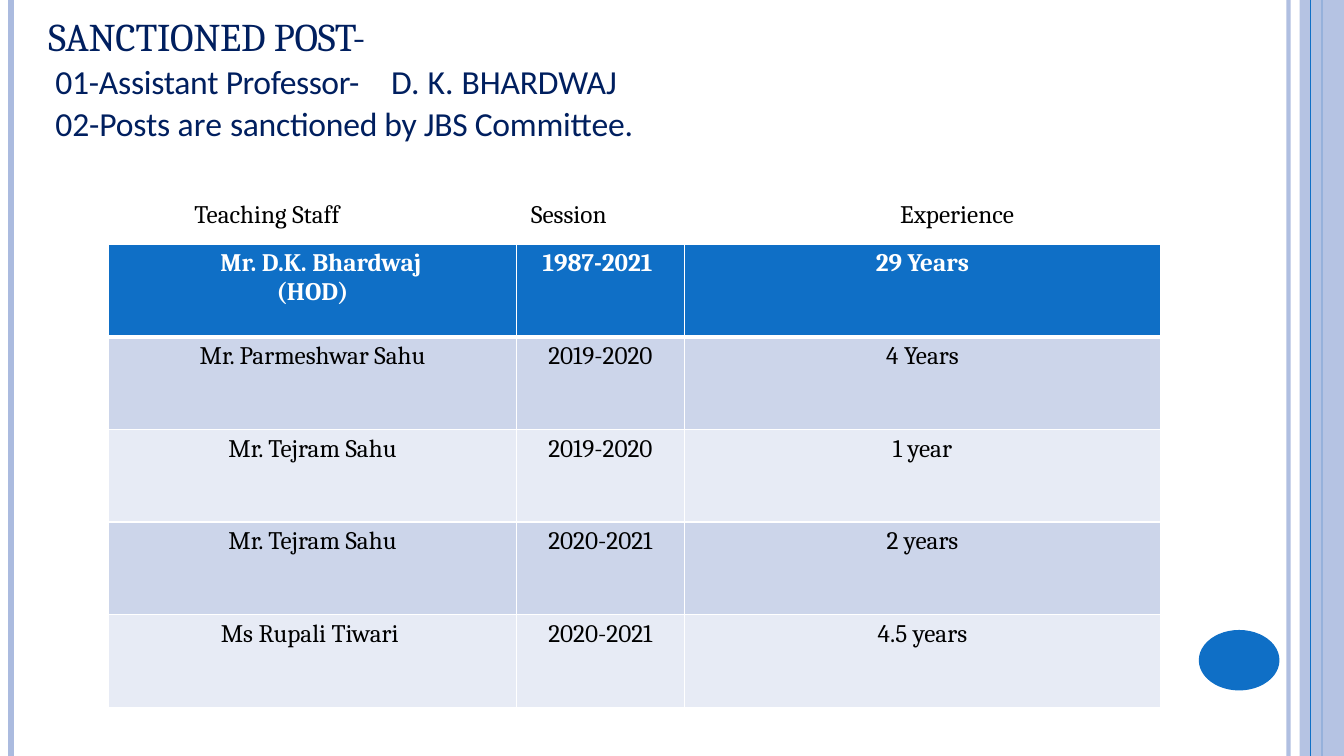
"""Build the sanctioned post and teaching staff slide."""
from lxml.etree import SubElement
from pptx import Presentation
from pptx.dml.color import RGBColor
from pptx.enum.shapes import MSO_CONNECTOR, MSO_SHAPE
from pptx.enum.text import MSO_AUTO_SIZE, PP_ALIGN
from pptx.oxml import parse_xml
from pptx.oxml.ns import nsdecls, qn
from pptx.util import Inches, Pt

COLORS = {
    "blue": "0F6FC6", "lavender": "ABBBDF", "navy": "001F5F", "white": "FFFFFF",
    "black": "000000", "band": "CCD5EA", "pale": "E7EBF5",
}


def style(font, size, name, color, bold=False):
    """Apply size, typeface, weight and colour to a font."""
    for key, value in {"size": Pt(size), "name": name, "bold": bold}.items():
        setattr(font, key, value)
    font.color.rgb = RGBColor.from_string(COLORS[color])


def set_alpha(element, percent):
    """Make the solid colour inside an element partly transparent."""
    color = next(element.iter(qn("a:srgbClr")))
    SubElement(color, qn("a:alpha"), val=str(percent * 1000))


deck = Presentation()
deck.slide_width, deck.slide_height = Inches(13.33), Inches(7.5)
page = deck.slides.add_slide(deck.slide_layouts[6])

rules = [(12.78, "lavender", 3, 93), (0.11, "lavender", 4.5, 100),
         (13.11, "blue", 1.5, 100), (13, "blue", 0.75, 100)]
panels = [(MSO_SHAPE.RECTANGLE, 12.89, 0, 0.44, 7.5, "lavender", 87),
          (MSO_SHAPE.OVAL, 11.89, 6.25, 0.8, 0.6, "blue", 100)]


for left, color, width, alpha in rules[:3]:
    rule = page.shapes.add_connector(
        MSO_CONNECTOR.STRAIGHT, Inches(left), 0, Inches(left), Inches(7.5))
    rule.line.color.rgb = RGBColor.from_string(COLORS[color])
    rule.line.width = Pt(width)
    if alpha < 100:
        set_alpha(rule.line._ln, alpha)
    SubElement(rule._element.spPr, qn("a:effectLst"))

for kind, left, top, width, height, color, alpha in panels:
    panel = page.shapes.add_shape(
        kind, Inches(left), Inches(top), Inches(width), Inches(height))
    panel.shadow.inherit = False
    panel.fill.solid()
    panel.fill.fore_color.rgb = RGBColor.from_string(COLORS[color])
    panel.line.fill.background()
    if alpha < 100:
        set_alpha(panel._element.spPr, alpha)

    if kind == MSO_SHAPE.RECTANGLE:
        left, color, width, alpha = rules[3]
        rule = page.shapes.add_connector(
            MSO_CONNECTOR.STRAIGHT, Inches(left), 0, Inches(left), Inches(7.5))
        rule.line.color.rgb = RGBColor.from_string(COLORS[color])
        rule.line.width = Pt(width)
        SubElement(rule._element.spPr, qn("a:effectLst"))

heading = [
    (28, "Cambria", 0.01, [("SANCTIONED ", -20), ("POST-", -10)]),
    (24, "Calibri", 0.08, [("01-Assistant ", -20), ("Professor-\t", -30),
                           ("D. K. ", 10), ("BHARDWAJ", -10)]),
    (24, "Calibri", 0.08, [("02-Posts ", -10), ("are ", 10),
                           ("sanctioned by JBS Committee.", -20)]),
]
box = page.shapes.add_textbox(Inches(0.47), Inches(0.17), Inches(12.31), Inches(1.27))
frame = box.text_frame
for key, value in {"word_wrap": True, "margin_left": 0, "margin_right": 0,
                   "margin_top": Inches(0.06), "margin_bottom": 0,
                   "auto_size": MSO_AUTO_SIZE.SHAPE_TO_FIT_TEXT}.items():
    setattr(frame, key, value)
for index, (size, name, indent, spans) in enumerate(heading):
    para = frame.add_paragraph() if index else frame.paragraphs[0]
    para.line_spacing = Pt(25.9)
    para.space_before = Pt(4.2 if index else 0)
    properties = para._p.get_or_add_pPr()
    properties.set("marL", str(Inches(indent)))
    properties.append(parse_xml(
        f'<a:tabLst {nsdecls("a")}><a:tab pos="{Inches(3.33)}" algn="l"/></a:tabLst>'))
    for text, spacing in spans:
        span = para.add_run()
        span.text = text
        style(span.font, size, name, "navy")
        span._r.get_or_add_rPr().set("spc", str(spacing))

staff = [
    ("Mr. D.K. Bhardwaj \n(HOD)", "1987-2021 ", "29 Years"),
    ("Mr. Parmeshwar Sahu", "2019-2020", "4 Years"),
    ("Mr. Tejram Sahu", "2019-2020", "1 year"),
    ("Mr. Tejram Sahu", "2020-2021", "2 years"),
    ("Ms Rupali Tiwari ", "2020-2021", "4.5 years"),
]
table = page.shapes.add_table(
    len(staff), 3, Inches(1.08), Inches(2.42), Inches(10.42), Inches(4.58)).table
for column, width in zip(table.columns, (4.04, 1.67, 4.72)):
    column.width = Inches(width)
for row_index, texts in enumerate(staff):
    table.rows[row_index].height = Inches(0.92)
    header = row_index == 0
    fill = "blue" if header else ("pale", "band")[row_index % 2]
    for column_index, text in enumerate(texts):
        cell = table.cell(row_index, column_index)
        cell.text = text
        for para in cell.text_frame.paragraphs:
            para.alignment = PP_ALIGN.CENTER
            for span in para.runs:
                style(span.font, 18, "Cambria", "white" if header else "black", header)
        properties = cell._tc.get_or_add_tcPr()
        for side in "LRTB":
            thick = (row_index, side) in ((0, "B"), (1, "T"))
            properties.append(parse_xml(
                f'<a:ln{side} {nsdecls("a")} w="{Pt(3 if thick else 1)}"><a:solidFill>'
                f'<a:srgbClr val="{COLORS["white"]}"/></a:solidFill></a:ln{side}>'))
        cell.fill.solid()
        cell.fill.fore_color.rgb = RGBColor.from_string(COLORS[fill])
head_para = table.cell(0, 0).text_frame.paragraphs[0]
head_para._p.get_or_add_pPr().set("marL", str(Inches(0.22)))

for text, left, width in [("Teaching Staff", 1.83, 2.5), ("Session", 5.17, 1.58),
                          ("Experience", 8.83, 3.42)]:
    box = page.shapes.add_textbox(Inches(left), Inches(1.92), Inches(width), Inches(0.4))
    box.text_frame.word_wrap = True
    box.text_frame.auto_size = MSO_AUTO_SIZE.SHAPE_TO_FIT_TEXT
    span = box.text_frame.paragraphs[0].add_run()
    span.text = text
    style(span.font, 18, "Cambria", "black")

deck.save("out.pptx")
